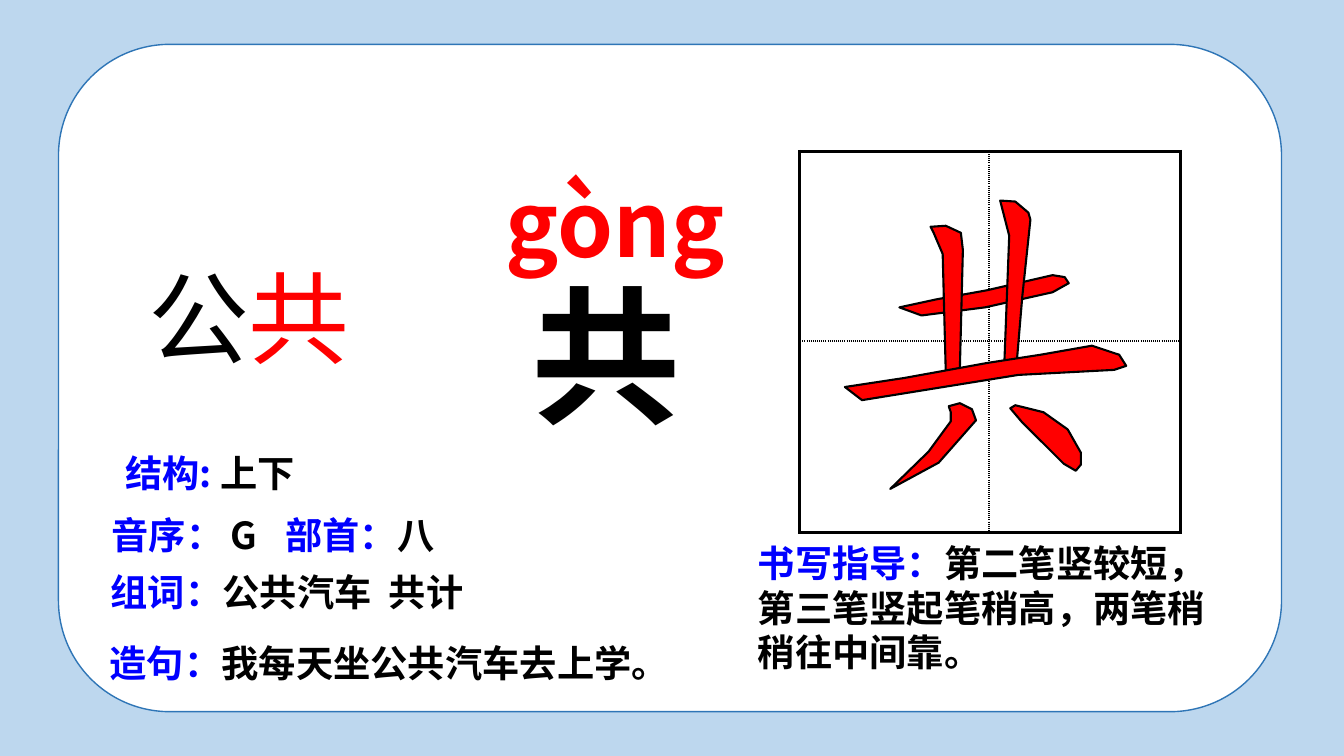
from lxml import etree
from pptx import Presentation
from pptx.dml.color import RGBColor
from pptx.enum.shapes import MSO_SHAPE
from pptx.enum.text import MSO_ANCHOR, MSO_AUTO_SIZE, PP_ALIGN
from pptx.oxml.ns import qn
from pptx.util import Emu, Inches, Pt

ROUNDED = MSO_SHAPE.ROUNDED_RECTANGLE
GROW = MSO_AUTO_SIZE.SHAPE_TO_FIT_TEXT
TOP, MIDDLE = MSO_ANCHOR.TOP, MSO_ANCHOR.MIDDLE
LEFT, CENTER = PP_ALIGN.LEFT, PP_ALIGN.CENTER

SLIDE_W, SLIDE_H = 13.33, 7.5
SKY, WHITE, BLUE = "BDD7EE", "FFFFFF", "0000FF"
BLACK, RED, EDGE = "000000", "FF0000", "2E75B6"
SC, JP = "Noto Sans CJK SC", "Noto Sans CJK JP"
BODY = {"size": Pt(26.6), "bold": True, "name": SC}

CARD = (4.35, 5.87, 91, 88.27)
WRITING_GRID = (59.49, 20, 28.28, 50.4)
GRID_TRACKS = (1.88, 1.9)

TEXTS = [
    {"area": (55.66, 70.8, 35.63, 19.33), "font": BODY,
     "runs": [("书写指导：", BLUE), ("第二笔竖较短，第三笔竖起笔稍高，两笔稍稍往中间靠。", BLACK)]},
    {"area": (38.78, 34.13, 12.68, 25.33), "wrap": False,
     "font": {"size": Pt(106.7), "bold": True, "name": SC}, "runs": [("共", BLACK)]},
    {"area": (36.91, 21.6, 18.68, 15.73),
     "font": {"size": Pt(64), "bold": True, "name": JP}, "runs": [("gòng", RED)]},
    {"area": (10.28, 33.2, 18.45, 17.47),
     "font": {"size": Pt(72), "bold": False, "name": SC}, "runs": [("公", BLACK), ("共", RED)]},
    {"area": (7.5, 74.67, 37.06, 7.33), "font": BODY, "tabs": (2.76,),
     "runs": [("组词：", BLUE), ("公共汽车\t共计", BLACK)]},
    {"area": (7.43, 81.07, 44.26, 10.27), "font": BODY, "spacing": 1.5,
     "runs": [("造句：", BLUE), ("我每天坐公共汽车去上学。", BLACK)]},
    {"area": (7.58, 67, 27.16, 7.33), "font": BODY, "anchor": MIDDLE, "tabs": (1.18, 1.72),
     "runs": [("音序：", BLUE), ("\tG\t", BLACK), ("部首：", BLUE), ("八", BLACK)]},
    {"area": (4.28, 58.8, 22.73, 7.33), "font": BODY, "anchor": MIDDLE, "align": CENTER,
     "runs": [("结构: ", BLUE), ("上下", BLACK)]},
]

UNITS_PER_INCH = 100
STROKES = {
    "right dot": [(1002, 405), (1007, 402), (1035, 409), (1059, 426), (1072, 449),
                  (1072, 461), (1067, 467), (1055, 460), (1013, 418)],
    "upper bar": [(979, 288), (1044, 273), (1056, 275), (1060, 281), (1044, 290),
                  (977, 305), (914, 313), (892, 305), (929, 297)],
    "left fall": [(943, 409), (941, 403), (952, 400), (964, 406), (968, 417),
                  (931, 459), (883, 485), (921, 448), (943, 418)],
    "left upright": [(926, 231), (923, 225), (938, 224), (953, 231), (955, 248),
                     (952, 367), (938, 368), (935, 252)],
    "right upright": [(1020, 211), (1022, 218), (1014, 294), (1008, 365), (996, 365),
                      (1001, 234), (992, 199), (1007, 200)],
    "long bar": [(1032, 352), (1083, 343), (1110, 352), (1117, 363), (1105, 367),
                 (1010, 372), (855, 397), (838, 384), (897, 375), (980, 360)],
}


def color(hex_text):
    return RGBColor.from_string(hex_text)


def place(left, top, width, height):
    return (Inches(SLIDE_W * left / 100), Inches(SLIDE_H * top / 100),
            Inches(SLIDE_W * width / 100), Inches(SLIDE_H * height / 100))


def paint(outline, fill, edge, weight):
    outline.shadow.inherit = False
    outline.fill.solid()
    outline.fill.fore_color.rgb = color(fill)
    outline.line.color.rgb = color(edge)
    outline.line.width = Pt(weight)


def add_border(cell, side, outer):
    border = etree.SubElement(cell._tc.get_or_add_tcPr(), qn("a:ln" + side),
                              w=str(Pt(2.25 if outer else 1.5)))
    solid = etree.SubElement(border, qn("a:solidFill"))
    etree.SubElement(solid, qn("a:srgbClr"), val=BLACK)
    etree.SubElement(border, qn("a:prstDash"), val="solid" if outer else "sysDot")


def add_writing_grid(slide):
    grid = slide.shapes.add_table(2, 2, *place(*WRITING_GRID)).table
    grid.first_row = grid.horz_banding = False
    for i, track in enumerate(GRID_TRACKS):
        grid.columns[i].width = grid.rows[i].height = Inches(track)
    for row in range(2):
        for column in range(2):
            cell = grid.cell(row, column)
            outer_sides = {"L": column == 0, "R": column == 1, "T": row == 0, "B": row == 1}
            for side, outer in outer_sides.items():
                add_border(cell, side, outer)
            cell.fill.background()


def add_text(slide, entry):
    frame = slide.shapes.add_textbox(*place(*entry["area"])).text_frame
    frame.word_wrap = entry.get("wrap", True)
    frame.auto_size = GROW
    frame.vertical_anchor = entry.get("anchor", TOP)
    line = frame.paragraphs[0]
    line.alignment = entry.get("align", LEFT)
    if "spacing" in entry:
        line.line_spacing = entry["spacing"]
    if "tabs" in entry:
        stops = etree.SubElement(line._p.get_or_add_pPr(), qn("a:tabLst"))
        for stop in entry["tabs"]:
            etree.SubElement(stops, qn("a:tab"), pos=str(Inches(stop)), algn="l")
    for words, ink in entry["runs"]:
        run = line.add_run()
        run.text = words
        for attribute, value in entry["font"].items():
            setattr(run.font, attribute, value)
        run.font.color.rgb = color(ink)
        etree.SubElement(run._r.get_or_add_rPr(), qn("a:ea"), typeface=entry["font"]["name"])


def add_stroke(slide, points):
    builder = slide.shapes.build_freeform(*points[0], scale=Emu(Inches(1) // UNITS_PER_INCH))
    builder.add_line_segments(points[1:], close=True)
    paint(builder.convert_to_shape(), RED, BLACK, 1.5)


def main():
    deck = Presentation()
    deck.slide_width, deck.slide_height = Inches(SLIDE_W), Inches(SLIDE_H)
    slide = deck.slides.add_slide(deck.slide_layouts[6])
    slide.background.fill.solid()
    slide.background.fill.fore_color.rgb = color(SKY)
    paint(slide.shapes.add_shape(ROUNDED, *place(*CARD)), WHITE, EDGE, 1)
    add_writing_grid(slide)
    for entry in TEXTS:
        add_text(slide, entry)
    for points in STROKES.values():
        add_stroke(slide, points)
    deck.save("out.pptx")


if __name__ == "__main__":
    main()
